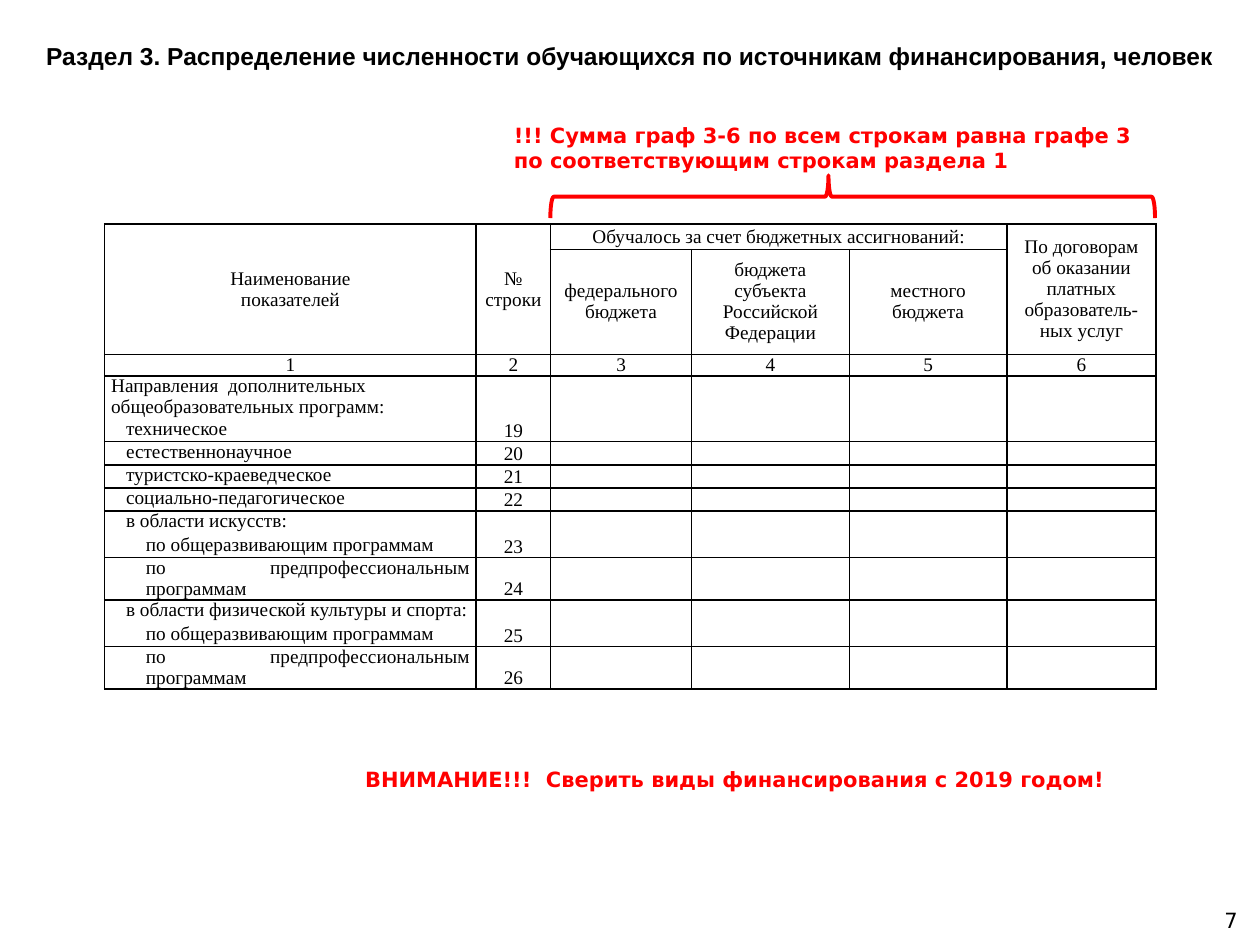
from lxml.etree import SubElement
from pptx import Presentation
from pptx.dml.color import RGBColor
from pptx.enum.shapes import MSO_SHAPE
from pptx.enum.text import MSO_ANCHOR, MSO_AUTO_SIZE, PP_ALIGN
from pptx.oxml.ns import qn
from pptx.util import Cm, Pt

COLORS = {"text": "000000", "warning": "FF0000", "border": "000000"}
COLUMNS = [7.49, 1.5, 2.84, 3.18, 3.18, 3.0]
LINE = 0.43
HEADINGS = [
    (0, 0, 1, 0, "Наименование\nпоказателей"),
    (0, 1, 1, 1, "№\nстроки"),
    (0, 2, 0, 4, "Обучалось за счет бюджетных ассигнований:"),
    (0, 5, 1, 5, "По договорам об оказании платных образователь-ных услуг"),
    (1, 2, 1, 2, "федерального бюджета"),
    (1, 3, 1, 3, "бюджета субъекта Российской Федерации"),
    (1, 4, 1, 4, "местного бюджета"),
]
INDICATORS = [
    ("Направления  дополнительных общеобразовательных программ:", 0, "", 2),
    ("техническое", 0.3, "19", 1),
    ("естественнонаучное", 0.3, "20", 1),
    ("туристско-краеведческое", 0.3, "21", 1),
    ("социально-педагогическое", 0.3, "22", 1),
    ("в области искусств:", 0.3, "", 1),
    ("по общеразвивающим программам", 0.7, "23", 1),
    ("по предпрофессиональным программам", 0.7, "24", 2),
    ("в области физической культуры и спорта:", 0.3, "", 1),
    ("по общеразвивающим программам", 0.7, "25", 1),
    ("по предпрофессиональным программам", 0.7, "26", 2),
]


def apply(target, values):
    """Set every attribute named in values on target."""
    for name, value in values.items():
        setattr(target, name, value)


class SlideBuilder:
    """Holds the text styles and the current page."""

    styles = {
        "title": {"name": "Arial", "size": Pt(14), "bold": True},
        "warning": {"name": "DejaVu Sans", "size": Pt(12), "bold": True},
        "number": {"name": "DejaVu Sans", "size": Pt(12), "bold": False},
        "table": {"name": "Times New Roman", "size": Pt(11), "bold": False},
    }

    def __init__(self, deck):
        """Add a title-only page to the deck."""
        self.page = deck.slides.add_slide(deck.slide_layouts[5])

    def paragraph(self, para, text, style, color="text", **layout):
        """Fill one paragraph with formatted text."""
        para.text = text
        apply(para, layout)
        for span in para.runs:
            apply(span.font, self.styles[style])
            span.font.color.rgb = RGBColor.from_string(COLORS[color])

    def title(self, text, left, top, width, height):
        """Move and fill the title placeholder."""
        box = self.page.shapes.title
        apply(box, {"left": Cm(left), "top": Cm(top), "width": Cm(width), "height": Cm(height)})
        apply(box.text_frame, {"auto_size": MSO_AUTO_SIZE.NONE, "vertical_anchor": MSO_ANCHOR.MIDDLE})
        self.paragraph(box.text_frame.paragraphs[0], text, "title", alignment=PP_ALIGN.CENTER)

    def text(self, text, left, top, width, height, style, color="text",
             align=PP_ALIGN.LEFT, anchor=MSO_ANCHOR.TOP):
        """Add a wrapping text box."""
        box = self.page.shapes.add_textbox(Cm(left), Cm(top), Cm(width), Cm(height))
        apply(box.text_frame, {"word_wrap": True, "vertical_anchor": anchor})
        self.paragraph(box.text_frame.paragraphs[0], text, style, color, alignment=align)

    def brace(self, left, top, width, height):
        """Add a brace turned to point upwards."""
        brace = self.page.shapes.add_shape(
            MSO_SHAPE.RIGHT_BRACE, Cm(left), Cm(top), Cm(width), Cm(height))
        brace.rotation = 270
        brace.adjustments[0], brace.adjustments[1] = 0.08, 0.46
        brace.shadow.inherit = False
        brace.fill.background()
        brace.line.color.rgb = RGBColor.from_string(COLORS["warning"])
        brace.line.width = Pt(2.25)

    def cell(self, cell, text, align=PP_ALIGN.CENTER, anchor=MSO_ANCHOR.MIDDLE, indent=0):
        """Fill a table cell with fixed line spacing."""
        cell.vertical_anchor = anchor
        para = cell.text_frame.paragraphs[0]
        self.paragraph(para, text, "table", alignment=align, line_spacing=Pt(12))
        if indent:
            para._p.get_or_add_pPr().set("marL", str(Cm(indent)))
        if not text:
            para._p.get_or_add_endParaRPr().set("sz", "1100")

    def frame(self, cell, hidden):
        """Clear the fill and draw the borders that are not hidden."""
        apply(cell, {"margin_left": Cm(0.13), "margin_right": Cm(0.13),
                     "margin_top": 0, "margin_bottom": 0})
        properties = cell._tc.get_or_add_tcPr()
        for side in ("lnL", "lnR", "lnT", "lnB"):
            line = SubElement(properties, qn(f"a:{side}"), w=str(Pt(1)))
            if side in hidden:
                SubElement(line, qn("a:noFill"))
            else:
                fill = SubElement(line, qn("a:solidFill"))
                SubElement(fill, qn("a:srgbClr"), val=COLORS["border"])
        cell.fill.background()

    def table(self, left, top):
        """Add the funding table."""
        heights = [0.51, 2.11, LINE] + [LINE * lines for *_, lines in INDICATORS]
        table = self.page.shapes.add_table(
            len(heights), len(COLUMNS), Cm(left), Cm(top),
            Cm(sum(COLUMNS)), Cm(sum(heights))).table
        apply(table, {"first_row": False, "horz_banding": False})
        for column, width in zip(table.columns, COLUMNS):
            column.width = Cm(width)
        groups = [row for row, item in enumerate(INDICATORS, 3) if not item[2]]
        for index, height in enumerate(heights):
            table.rows[index].height = Cm(height)
            hidden = {"lnB"} if index in groups else {"lnT"} if index - 1 in groups else set()
            for column in range(len(COLUMNS)):
                cell = table.cell(index, column)
                self.frame(cell, hidden)
                self.cell(cell, str(column + 1) if index == 2 else "")
        for row, column, last_row, last_column, text in HEADINGS:
            cell = table.cell(row, column)
            if (row, column) != (last_row, last_column):
                cell.merge(table.cell(last_row, last_column))
            self.cell(cell, text)
        for row, (name, indent, number, _) in enumerate(INDICATORS, 3):
            align = PP_ALIGN.JUSTIFY if indent else PP_ALIGN.LEFT
            self.cell(table.cell(row, 0), name, align, MSO_ANCHOR.TOP, indent)
            self.cell(table.cell(row, 1), number, anchor=MSO_ANCHOR.BOTTOM)


def main():
    """Build the deck and save it."""
    deck = Presentation()
    apply(deck, {"slide_width": Cm(25.4), "slide_height": Cm(19.05)})
    builder = SlideBuilder(deck)
    builder.text("7", 19.28, 18.03, 5.92, 1.02, "number",
                 align=PP_ALIGN.RIGHT, anchor=MSO_ANCHOR.MIDDLE)
    builder.table(2.11, 4.52)
    builder.title("Раздел 3. Распределение численности обучающихся по источникам "
                  "финансирования, человек", 0, 0.69, 25.4, 0.86)
    builder.brace(16.76, -2.13, 0.86, 12.19)
    builder.text("!!! Сумма граф 3-6 по всем строкам равна графе 3 по соответствующим "
                 "строкам раздела 1", 10.11, 2.34, 13.41, 1.27, "warning", "warning")
    builder.text("ВНИМАНИЕ!!!  Сверить виды финансирования с 2019 годом!",
                 7.11, 15.32, 16.21, 0.76, "warning", "warning")
    deck.save("out.pptx")


if __name__ == "__main__":
    main()
